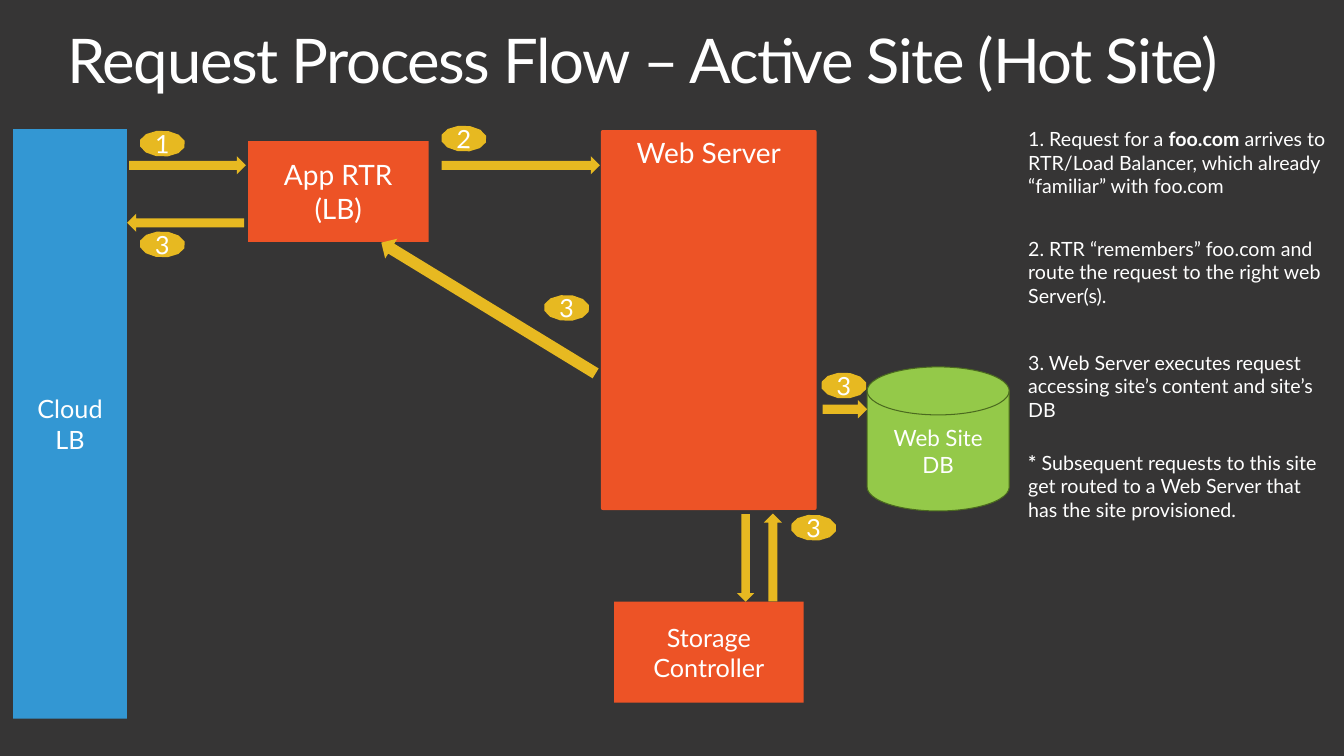
from dataclasses import dataclass

from pptx import Presentation
from pptx.dml.color import RGBColor
from pptx.enum.shapes import MSO_SHAPE
from pptx.enum.text import MSO_ANCHOR, MSO_AUTO_SIZE, PP_ALIGN
from pptx.util import Pt

EMU_PER_PX = 9144  # 100 px to the inch


def px(length):
    return length * EMU_PER_PX


@dataclass(frozen=True)
class Theme:
    font: str = "Lato"
    background: str = "363535"
    text: str = "FFFFFF"
    balancer: str = "3397D3"
    server: str = "ED5326"
    database: str = "94C949"
    database_edge: str = "4B6A1F"
    flow: str = "E7B921"
    title_size: int = 44
    large_size: int = 20
    label_size: int = 18
    database_size: int = 16
    note_size: int = 14


class FlowSlide:
    def __init__(self, presentation, theme):
        self.theme = theme
        self.slide = presentation.slides.add_slide(presentation.slide_layouts[5])
        background = self.slide.background.fill
        background.solid()
        background.fore_color.rgb = RGBColor.from_string(theme.background)

    def fill_frame(self, frame, paragraphs, size, align, anchor):
        """Set the text of a frame; each paragraph is a list of (text, bold) runs."""
        frame.word_wrap = True
        frame.auto_size = MSO_AUTO_SIZE.NONE
        frame.vertical_anchor = anchor
        for index, runs in enumerate(paragraphs):
            paragraph = frame.paragraphs[0] if index == 0 else frame.add_paragraph()
            paragraph.alignment = align
            for text, bold in runs:
                run = paragraph.add_run()
                run.text = text
                run.font.name = self.theme.font
                run.font.size = Pt(size)
                run.font.bold = bold
                run.font.color.rgb = RGBColor.from_string(self.theme.text)

    def title(self, text, box):
        heading = self.slide.shapes.title
        heading.left, heading.top, heading.width, heading.height = map(px, box)
        self.fill_frame(heading.text_frame, [[(text, False)]], self.theme.title_size,
                        PP_ALIGN.LEFT, MSO_ANCHOR.TOP)
        paragraph = heading.text_frame.paragraphs[0]
        paragraph.line_spacing = 0.9
        paragraph.runs[0].font._element.set("spc", "-100")

    def shape(self, kind, box, color, edge=None, rotation=0):
        part = self.slide.shapes.add_shape(kind, *map(px, box))
        part.shadow.inherit = False
        part.rotation = rotation
        part.fill.solid()
        part.fill.fore_color.rgb = RGBColor.from_string(color)
        if edge:
            part.line.color.rgb = RGBColor.from_string(edge)
            part.line.width = Pt(0.75)
        else:
            part.line.fill.background()
        return part

    def label(self, part, text, size, anchor=MSO_ANCHOR.MIDDLE):
        lines = [[(line, False)] for line in text.split("\n")]
        self.fill_frame(part.text_frame, lines, size, PP_ALIGN.CENTER, anchor)

    def node(self, text, box, color, size, anchor=MSO_ANCHOR.MIDDLE, rounding=0):
        block = self.shape(MSO_SHAPE.ROUNDED_RECTANGLE, box, color)
        block.adjustments[0] = rounding
        self.label(block, text, size, anchor)

    def database(self, text, box):
        disk = self.shape(MSO_SHAPE.FLOWCHART_MAGNETIC_DISK, box,
                          self.theme.database, self.theme.database_edge)
        self.label(disk, text, self.theme.database_size)

    def arrow(self, box, rotation=0):
        self.shape(MSO_SHAPE.RIGHT_ARROW, box, self.theme.flow, rotation=rotation)

    def badge(self, number, left, top):
        step = self.shape(MSO_SHAPE.DODECAGON, (left, top, 44, 25),
                          self.theme.flow, rotation=1.3)
        frame = step.text_frame
        frame.margin_left = frame.margin_right = 0
        frame.margin_top = frame.margin_bottom = 0
        self.label(step, number, self.theme.label_size)

    def note(self, top, height, runs):
        box = self.slide.shapes.add_textbox(px(1010), px(top), px(323), px(height))
        self.fill_frame(box.text_frame, [runs], self.theme.note_size,
                        PP_ALIGN.LEFT, MSO_ANCHOR.TOP)


def main():
    presentation = Presentation()
    presentation.slide_width, presentation.slide_height = px(1333), px(750)
    theme = Theme()
    flow = FlowSlide(presentation, theme)

    flow.title("Request Process Flow – Active Site (Hot Site)", (57, 25, 1219, 82))

    flow.node("Cloud\nLB", (13, 128, 113, 585), theme.balancer, theme.label_size)
    flow.node("Storage Controller", (609, 597, 188, 100), theme.server, theme.label_size)
    flow.node("App RTR\n(LB)", (246, 140, 179, 100), theme.server, theme.large_size)
    flow.node("Web Server", (596, 129, 214, 377), theme.server, theme.large_size,
              MSO_ANCHOR.TOP, 0.01)
    flow.database("Web Site\nDB", (860, 364, 141, 143))

    arrows = [
        ((128, 155, 116, 18), 0),
        ((438, 155, 157, 18), 0),
        ((126, 212, 116, 18), 180),
        ((360, 294, 249, 23), 211.4),
        ((816, 397, 44, 18), 0),
        ((696, 545, 87, 17), 90),
        ((723, 544, 87, 18), 270),
    ]
    for box, rotation in arrows:
        flow.arrow(box, rotation)

    badges = [("1", 139, 130), ("2", 438, 125), ("3", 139, 230),
              ("3", 540, 293), ("3", 815, 370), ("3", 785, 511)]
    for number, left, top in badges:
        flow.badge(number, left, top)

    notes = [
        (121, 81, [("1. Request for a ", False), ("foo.com", True),
                   (" arrives to RTR/Load Balancer, which already "
                    "“familiar” with foo.com", False)]),
        (230, 81, [("2. RTR “remembers” foo.com and route the request "
                    "to the right web Server(s).", False)]),
        (343, 57, [("3. Web Server executes request accessing site’s content "
                    "and site’s DB", False)]),
        (442, 81, [("*", True), (" Subsequent requests to this site get routed to "
                                 "a Web Server that has the site provisioned.", False)]),
    ]
    for top, height, runs in notes:
        flow.note(top, height, runs)

    presentation.save("out.pptx")


if __name__ == "__main__":
    main()
